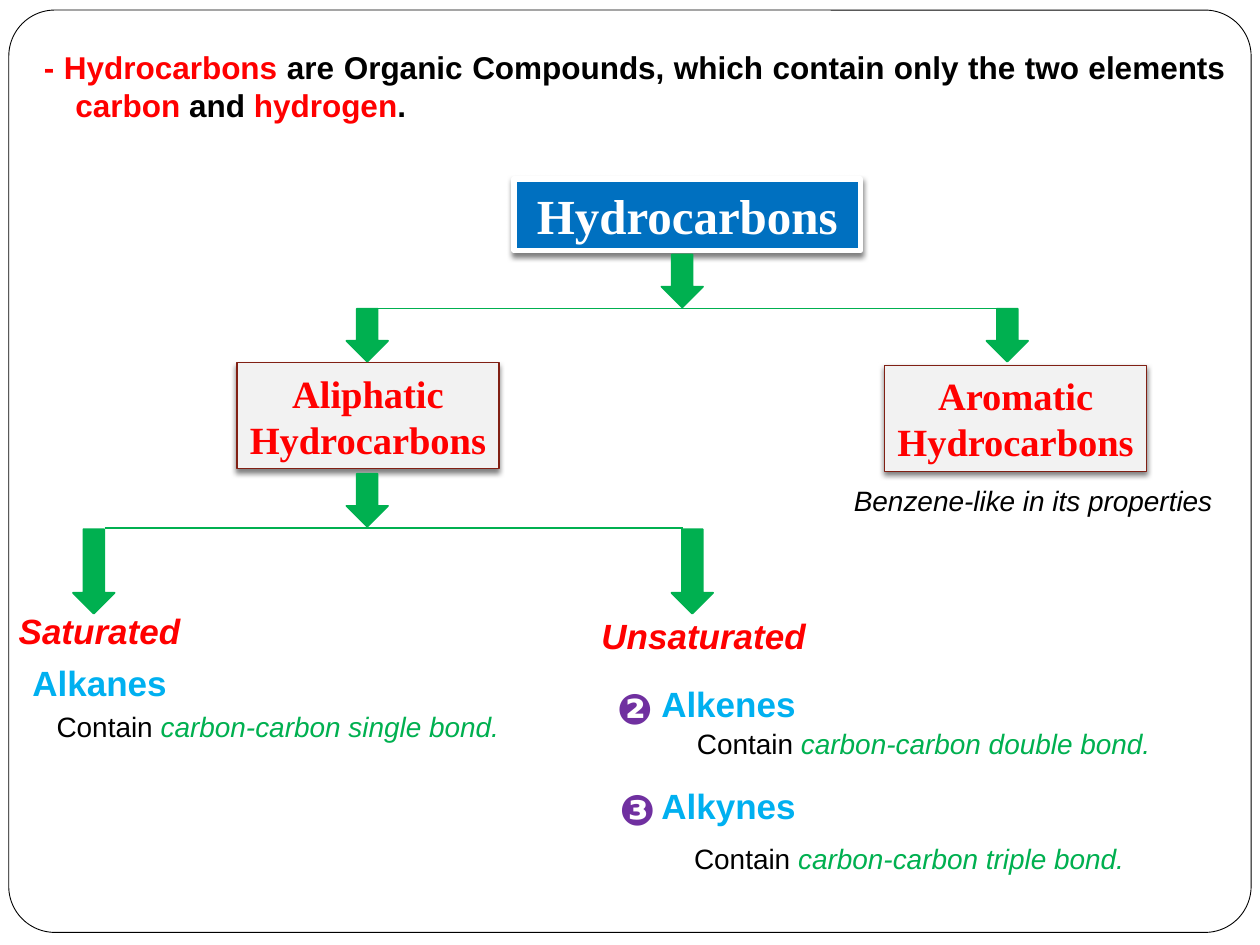
from lxml.etree import SubElement
from pptx import Presentation
from pptx.dml.color import RGBColor
from pptx.enum.shapes import MSO_CONNECTOR, MSO_SHAPE
from pptx.enum.text import MSO_ANCHOR, MSO_AUTO_SIZE, PP_ALIGN
from pptx.oxml.ns import qn
from pptx.util import Inches, Pt

BLACK = RGBColor(0x00, 0x00, 0x00)
WHITE = RGBColor(0xFF, 0xFF, 0xFF)
RED = RGBColor(0xFF, 0x00, 0x00)
GREEN = RGBColor(0x00, 0xB0, 0x50)
SKY = RGBColor(0x00, 0xB0, 0xF0)
BLUE = RGBColor(0x00, 0x70, 0xC0)
PURPLE = RGBColor(0x70, 0x30, 0xA0)
LIGHT_GREY = RGBColor(0xF2, 0xF2, 0xF2)
MAROON = RGBColor(0x81, 0x20, 0x14)

CENTER, JUSTIFY = PP_ALIGN.CENTER, PP_ALIGN.JUSTIFY

prs = Presentation()
prs.slide_width, prs.slide_height = Inches(10), Inches(7.5)
slide = prs.slides.add_slide(prs.slide_layouts[6])
shapes = slide.shapes


def write(holder, runs, size, align=CENTER, font="Arial", bold=False):
    """Fill a shape with one paragraph of (text, colour, italic) runs."""
    frame = holder.text_frame
    frame.word_wrap = True
    frame.auto_size = MSO_AUTO_SIZE.SHAPE_TO_FIT_TEXT
    paragraph = frame.paragraphs[0]
    paragraph.alignment = align
    for text, colour, italic in runs:
        run = paragraph.add_run()
        run.text = text
        run.font.name, run.font.size = font, Pt(size)
        run.font.bold, run.font.italic = bold, italic
        run.font.color.rgb = colour
    return paragraph


def add_outlined(kind, box, fill, line, weight):
    shape = shapes.add_shape(kind, *map(Inches, box))
    shape.shadow.inherit = False
    shape.fill.solid()
    shape.fill.fore_color.rgb = fill
    shape.line.color.rgb = line
    shape.line.width = Pt(weight)
    return shape


border = add_outlined(MSO_SHAPE.ROUNDED_RECTANGLE, (0.07, 0.08, 9.86, 7.32), WHITE, BLACK, 0.5)
border.adjustments[0] = 0.05

# Definition with a hanging indent
definition = shapes.add_textbox(Inches(0.25), Inches(0.33), Inches(9.58), Inches(0.71))
definition_runs = [
    ("- Hydrocarbons", RED, False),
    (" are Organic Compounds, which contain only the two elements ", BLACK, False),
    ("carbon", RED, False),
    (" and ", BLACK, False),
    ("hydrogen", RED, False),
    (".", BLACK, False),
]
properties = write(definition, definition_runs, 18, JUSTIFY, bold=True)._p.get_or_add_pPr()
properties.set("marL", str(Inches(0.25)))
properties.set("indent", str(-Inches(0.25)))

# Bold headings: text, box, size, colour, italic, alignment
headings = [
    ("Alkanes", (0, 5.2, 1.58, 0.44), 20, SKY, False, CENTER),
    ("❸", (4.82, 6.17, 0.58, 0.5), 24, PURPLE, False, JUSTIFY),
    ("❷", (4.8, 5.37, 0.58, 0.5), 24, PURPLE, False, JUSTIFY),
    ("Alkenes", (5.15, 5.37, 1.33, 0.44), 20, SKY, False, JUSTIFY),
    ("Alkynes", (5.15, 6.18, 1.42, 0.44), 20, SKY, False, JUSTIFY),
    ("Saturated", (0, 4.79, 1.58, 0.44), 20, RED, True, CENTER),
    ("Unsaturated", (4.5, 4.83, 2.17, 0.44), 20, RED, True, CENTER),
]
for text, box, size, colour, italic, align in headings:
    heading = shapes.add_textbox(*map(Inches, box))
    write(heading, [(text, colour, italic)], size, align, bold=True)

bonds = [
    ("single", (0.33, 5.58, 3.75, 0.37)),
    ("double", (5.32, 5.72, 4.02, 0.37)),
    ("triple", (5.32, 6.63, 3.79, 0.37)),
]
for bond, box in bonds:
    description = shapes.add_textbox(*map(Inches, box))
    write(description, [("Contain ", BLACK, False), (f"carbon-carbon {bond} bond.", GREEN, True)], 16)

# Class boxes with a soft shadow below
classes = [
    ("Hydrocarbons", (4.08, 1.42, 2.75, 0.57), BLUE, WHITE, 3, 28, WHITE),
    ("Aliphatic Hydrocarbons", (1.88, 2.88, 2.08, 0.84), LIGHT_GREY, MAROON, 0.75, 22, RED),
    ("Aromatic Hydrocarbons", (7.02, 2.9, 2.08, 0.84), LIGHT_GREY, MAROON, 0.75, 22, RED),
]
for text, box, fill, line, weight, size, colour in classes:
    class_box = add_outlined(MSO_SHAPE.RECTANGLE, box, fill, line, weight)
    write(class_box, [(text, colour, False)], size, font="Times New Roman", bold=True)
    class_box.text_frame.vertical_anchor = MSO_ANCHOR.MIDDLE
    class_box.text_frame.margin_left = class_box.text_frame.margin_right = Inches(0.05)
    effects = class_box._element.spPr.find(qn("a:effectLst"))
    shadow = SubElement(effects, qn("a:outerShdw"), blurRad=str(Pt(3)), dist=str(Pt(2)),
                        dir="5400000", rotWithShape="0")
    shadow_colour = SubElement(shadow, qn("a:srgbClr"), val="000000")
    SubElement(shadow_colour, qn("a:alpha"), val="50000")

benzene_note = shapes.add_textbox(Inches(6.65), Inches(3.79), Inches(3.1), Inches(0.37))
write(benzene_note, [("Benzene-like in its properties", BLACK, True)], 16)

# Branch lines and arrows of the tree
for left, right, y in [(0.83, 5.42, 4.19), (2.92, 8.08, 2.45)]:
    branch = shapes.add_connector(MSO_CONNECTOR.STRAIGHT, Inches(left), Inches(y), Inches(right), Inches(y))
    branch.line.color.rgb = GREEN
    branch.line.width = Pt(0.75)
    SubElement(branch._element.spPr, qn("a:effectLst"))

arrows = [(0.58, 4.2, 0.67), (5.33, 4.2, 0.67), (2.75, 3.76, 0.42),
          (7.83, 2.45, 0.42), (2.75, 2.45, 0.42), (5.25, 2.02, 0.42)]
for left, top, height in arrows:
    add_outlined(MSO_SHAPE.DOWN_ARROW, (left, top, 0.33, height), GREEN, GREEN, 1)

prs.save("out.pptx")
